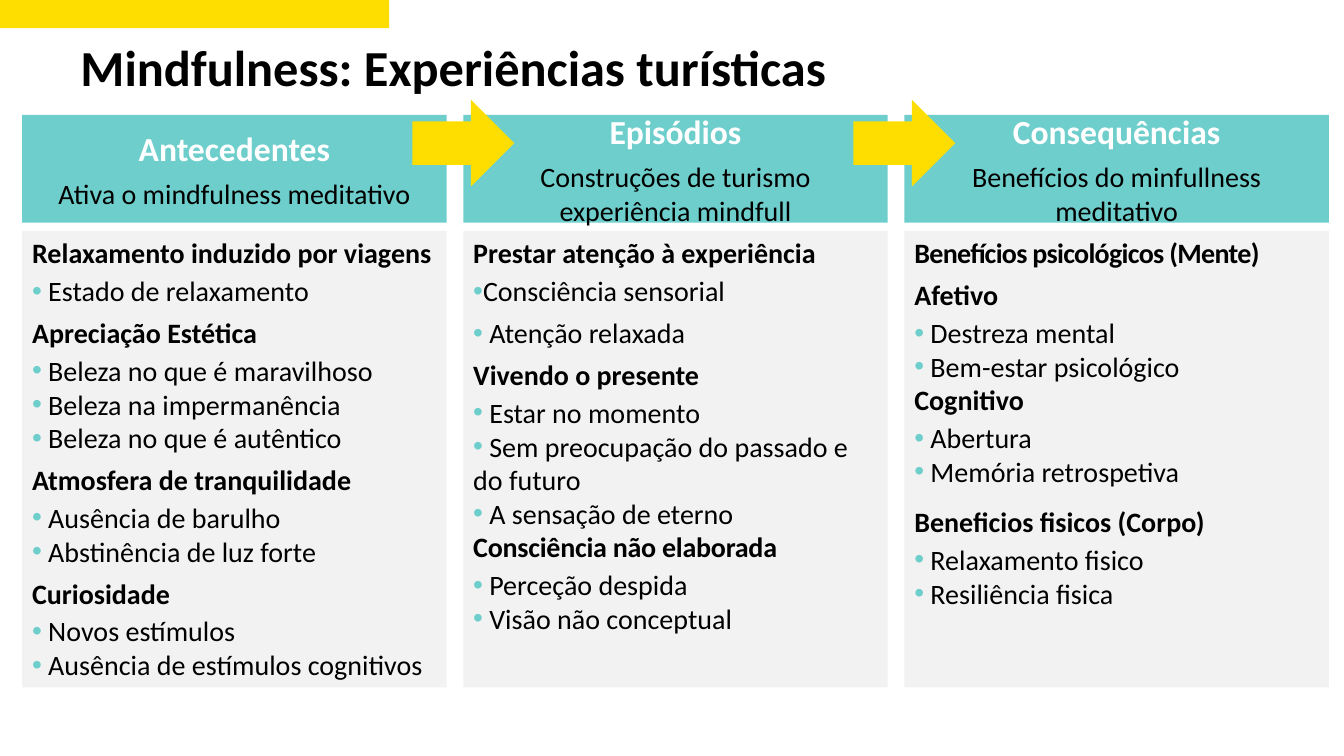
from pptx import Presentation
from pptx.dml.color import RGBColor
from pptx.enum.shapes import MSO_SHAPE as Kind
from pptx.enum.text import MSO_ANCHOR as Anchor, PP_ALIGN as Align
from pptx.util import Inches, Pt
from lxml.etree import SubElement as Sub
from pptx.oxml.ns import qn

TEAL, GOLD, GRAY = "6ECECB", "FDDE00", "F2F2F2"
BLACK, WHITE = "000000", "FFFFFF"
LEFT, WIDE, STEP = 0.22, 4.21, 4.375

# Column: title, subtitle, space after subtitle, lines
# Line: text, bulleted or heading, space after, letter spacing
COLS = [
    ("Antecedentes", "Ativa o mindfulness meditativo", 6, [
        ("Relaxamento induzido por viagens", False, 3, 0),
        (" Estado de relaxamento", True, 6, 0),
        ("Apreciação Estética", False, 3, 0),
        (" Beleza no que é maravilhoso", True, 0, 0),
        (" Beleza na impermanência", True, 0, 0),
        (" Beleza no que é autêntico", True, 6, 0),
        ("Atmosfera de tranquilidade", False, 3, 0),
        (" Ausência de barulho", True, 0, 0),
        (" Abstinência de luz forte", True, 6, 0),
        ("Curiosidade", False, 3, 0),
        (" Novos estímulos", True, 0, 0),
        (" Ausência de estímulos cognitivos", True, 0, 0),
    ]),
    ("Episódios", "Construções de turismo experiência mindfull", 0, [
        ("Prestar atenção à experiência", False, 3, 0),
        ("Consciência sensorial", True, 6, 0),
        (" Atenção relaxada", True, 6, 0),
        ("Vivendo o presente", False, 3, 0),
        (" Estar no momento", True, 0, 0),
        (" Sem preocupação do passado e do futuro", True, 0, 0),
        (" A sensação de eterno", True, 0, 0),
        ("Consciência não elaborada", False, 3, -0.2),
        (" Perceção despida", True, 0, 0),
        (" Visão não conceptual", True, 0, 0),
    ]),
    ("Consequências", "Benefícios do minfullness meditativo", 0, [
        ("Benefícios psicológicos (Mente)", False, 6, -0.5),
        ("Afetivo", False, 3, 0),
        (" Destreza mental", True, 0, 0),
        (" Bem-estar psicológico", True, 0, 0),
        ("Cognitivo", False, 3, 0),
        (" Abertura", True, 0, 0),
        (" Memória retrospetiva", True, 12, 0),
        ("Beneficios fisicos (Corpo)", False, 3, 0),
        (" Relaxamento fisico", True, 0, 0),
        (" Resiliência fisica", True, 0, 0),
    ]),
]


def color(code):
    return RGBColor.from_string(code)


def block(slide, kind, x, y, w, h, fill):
    shape = slide.shapes.add_shape(kind, Inches(x), Inches(y), Inches(w), Inches(h))
    shape.shadow.inherit = False
    shape.fill.solid()
    shape.fill.fore_color.rgb = color(fill)
    shape.line.fill.background()
    return shape


def set_up(frame, anchor):
    frame.word_wrap = True
    frame.vertical_anchor = anchor
    return frame


def bullet(par):
    props = par._p.get_or_add_pPr()
    Sub(Sub(props, qn("a:buClr")), qn("a:srgbClr"), val=TEAL)
    Sub(props, qn("a:buFont"), typeface="Arial")
    Sub(props, qn("a:buChar"), char="•")


def write(frame, text, size, tint=BLACK, bold=False, after=0,
          align=Align.LEFT, dot=False, track=0):
    # The first call fills the paragraph the frame already has
    par = frame.paragraphs[0]
    if par.runs:
        par = frame.add_paragraph()
    if dot:
        bullet(par)
    par.alignment = align
    par.space_after = Pt(after)
    run = par.add_run()
    run.text = text
    font = run.font
    font.name, font.size, font.bold = "Calibri", Pt(size), bold
    font.color.rgb = color(tint)
    if track:
        font._element.set("spc", str(round(track * 100)))
    return par


def column(slide, x, title, sub, after, lines):
    # Header
    head = block(slide, Kind.RECTANGLE, x, 1.14, WIDE, 1.07, TEAL)
    frame = set_up(head.text_frame, Anchor.MIDDLE)
    write(frame, title, 24, WHITE, True, 6, Align.CENTER)
    write(frame, sub, 20, after=after, align=Align.CENTER)

    # Body
    body = block(slide, Kind.RECTANGLE, x, 2.29, WIDE, 4.53, GRAY)
    frame = set_up(body.text_frame, Anchor.TOP)
    for text, dot, gap, track in lines:
        write(frame, text, 20, bold=not dot, after=gap, dot=dot, track=track)


def main():
    deck = Presentation()
    deck.slide_width, deck.slide_height = Inches(13.33), Inches(7.5)
    slide = deck.slides.add_slide(deck.slide_layouts[6])

    # Top band and title
    block(slide, Kind.RECTANGLE, 0, 0, 3.86, 0.28, GOLD)
    box = slide.shapes.add_textbox(Inches(0.7), Inches(0.38), Inches(9.03), Inches(0.76))
    frame = set_up(box.text_frame, Anchor.TOP)
    par = write(frame, "Mindfulness: Experiências turísticas", 36, bold=True)
    par.line_spacing = 0.9

    # Columns
    for i, col in enumerate(COLS):
        column(slide, LEFT + i * STEP, *col)

    # Arrows between columns
    for i in range(len(COLS) - 1):
        block(slide, Kind.RIGHT_ARROW, 4.09 + i * STEP, 0.99, 1.01, 0.86, GOLD)

    deck.save("out.pptx")


if __name__ == "__main__":
    main()
